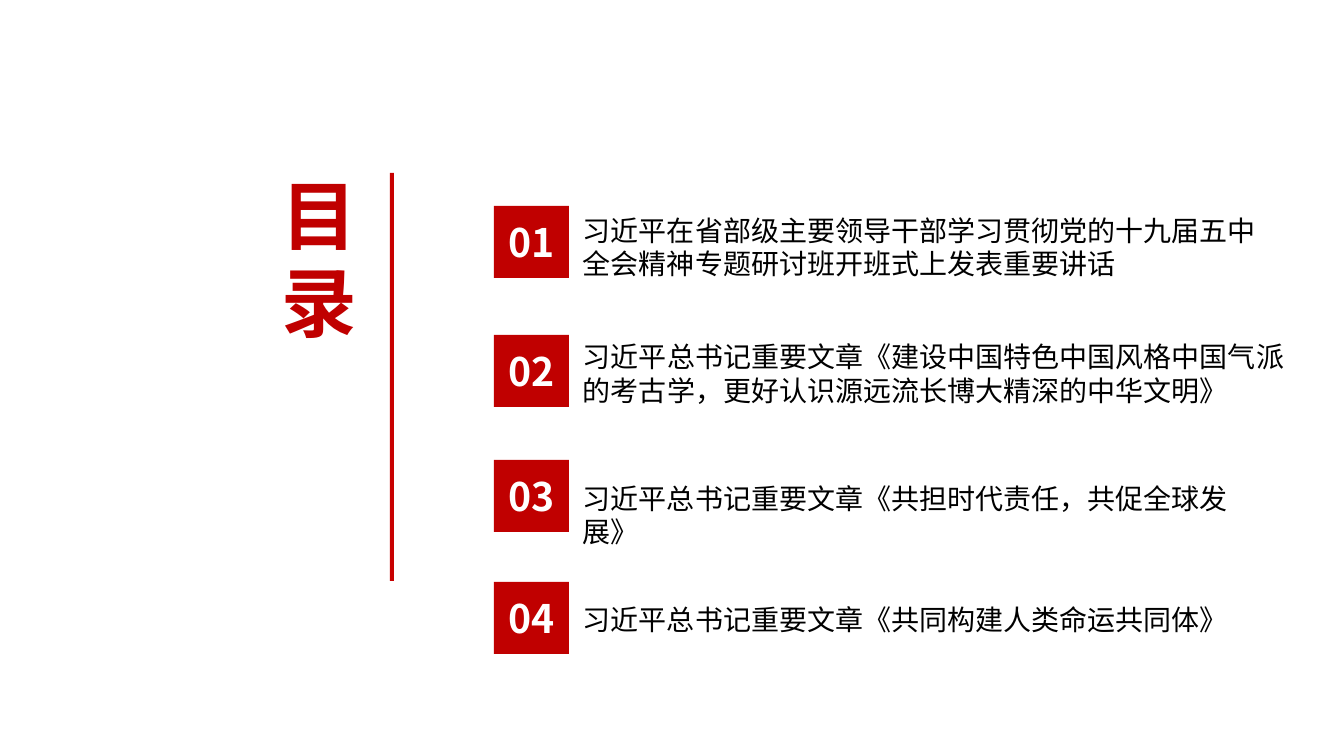
from lxml import etree
from pptx import Presentation
from pptx.dml.color import RGBColor
from pptx.enum.shapes import MSO_SHAPE
from pptx.enum.text import MSO_ANCHOR, MSO_AUTO_SIZE, PP_ALIGN
from pptx.oxml.ns import qn
from pptx.util import Emu, Pt

RECT = MSO_SHAPE.RECTANGLE
TOP, MIDDLE = MSO_ANCHOR.TOP, MSO_ANCHOR.MIDDLE
LEFT, CENTER = PP_ALIGN.LEFT, PP_ALIGN.CENTER
FIXED = MSO_AUTO_SIZE.NONE

RED = RGBColor(0xC0, 0x00, 0x00)
BRIGHT = RGBColor(0xC8, 0x00, 0x00)
BLACK = RGBColor(0x00, 0x00, 0x00)
WHITE = RGBColor(0xFF, 0xFF, 0xFF)
FACE = "Noto Sans CJK SC"
SCALE = 914400 / 100.8

# Tag top, text top, text width, text height, wording
ITEMS = [
    (206, 206, 699, 78, "习近平在省部级主要领导干部学习贯彻党的十九届五中全会精神专题研讨班开班式上发表重要讲话"),
    (335, 333, 727, 78, "习近平总书记重要文章《建设中国特色中国风格中国气派的考古学，更好认识源远流长博大精深的中华文明》"),
    (460, 474, 699, 44, "习近平总书记重要文章《共担时代责任，共促全球发展》"),
    (582, 596, 699, 44, "习近平总书记重要文章《共同构建人类命运共同体》"),
]


def px(count):
    return Emu(round(count * SCALE))


def place(shape, box):
    for name, value in zip(("left", "top", "width", "height"), box):
        setattr(shape, name, px(value))


def write(shape, text, size, color, bold=False, align=LEFT, pitch=None, **frame):
    """Fill a shape with one paragraph; pitch is an exact line height."""
    body = shape.text_frame
    layout = {"word_wrap": True, "auto_size": FIXED, "vertical_anchor": TOP, **frame}
    for name, value in layout.items():
        setattr(body, name, value)
    para = body.paragraphs[0]
    para.alignment = align
    if pitch:
        para.line_spacing = Pt(pitch)
    run = para.add_run()
    run.text = text
    for name, value in {"size": Pt(size), "bold": bold, "name": FACE}.items():
        setattr(run.font, name, value)
    run.font.color.rgb = color
    latin = run.font._element.find(qn("a:latin"))
    east = etree.Element(qn("a:ea"), typeface=FACE)
    latin.addnext(east)


def add_block(slide, box, color):
    block = slide.shapes.add_shape(RECT, *map(px, box))
    block.shadow.inherit = False
    block.fill.solid()
    block.fill.fore_color.rgb = color
    block.line.fill.background()
    return block


def add_item(slide, index, item):
    tag_top, top, width, height, text = item
    label = slide.shapes.add_textbox(*map(px, (573, top, width, height)))
    write(label, text, 20, BLACK, pitch=24, margin_top=px(7))
    tag = add_block(slide, (494, tag_top, 75, 72), RED)
    write(tag, f"{index:02}", 28, WHITE, True, CENTER, vertical_anchor=MIDDLE)


def main():
    deck = Presentation()
    deck.slide_width, deck.slide_height = px(1344), px(756)
    slide = deck.slides.add_slide(deck.slide_layouts[5])
    title = slide.shapes.title
    place(title, (275, 157, 121, 191))
    write(title, "目录", 54, RED, True, pitch=62,
          margin_left=px(7), margin_right=px(7), margin_top=px(16), margin_bottom=px(4))
    add_block(slide, (390, 173, 4, 408), BRIGHT)
    for index, item in enumerate(ITEMS, 1):
        add_item(slide, index, item)
    deck.save("out.pptx")


if __name__ == "__main__":
    main()
